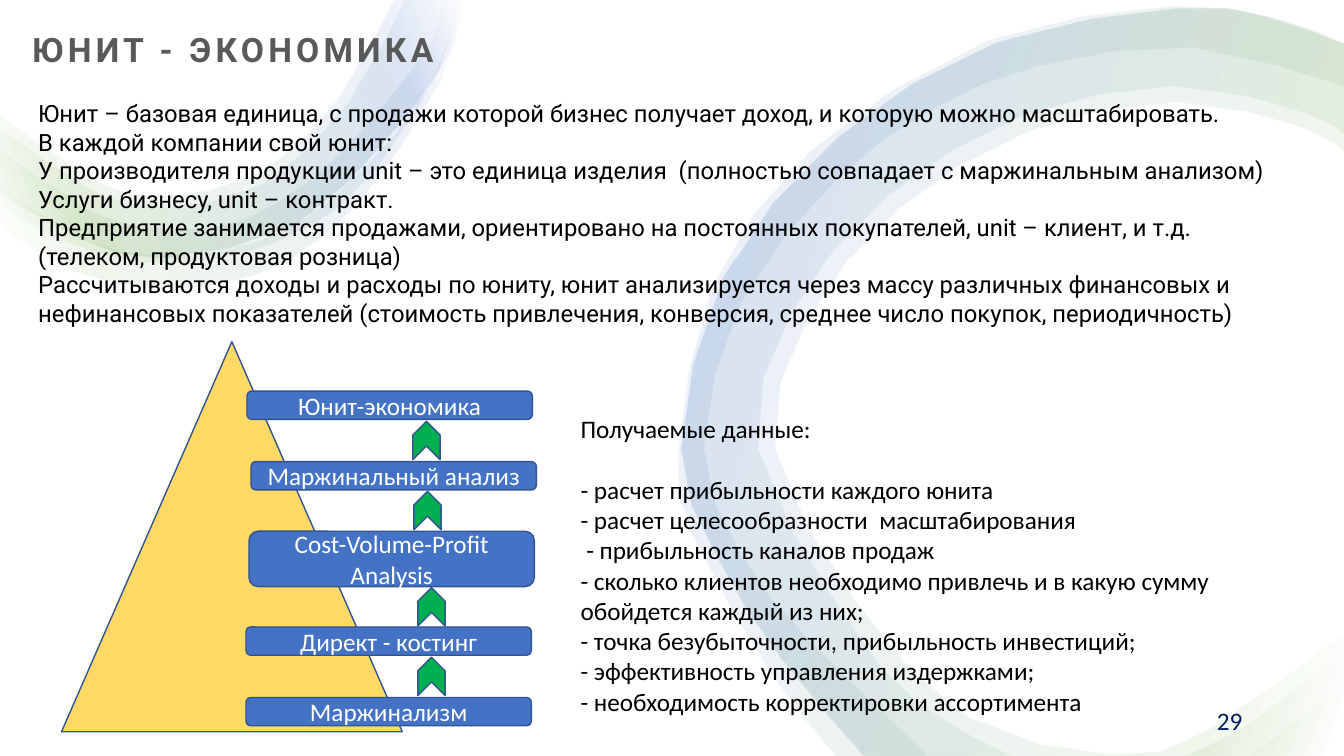
"""Build the unit economics slide with its ladder of methods and swirl backdrop."""
from lxml.etree import SubElement
from pptx import Presentation
from pptx.dml.color import RGBColor
from pptx.enum.shapes import MSO_SHAPE
from pptx.enum.text import MSO_ANCHOR, PP_ALIGN
from pptx.oxml.ns import qn
from pptx.util import Inches, Pt

WIDE, HIGH = 13.33, 7.5
HUES = {"title": "595959", "text": "000000", "box": "4472C4", "edge": "325491",
        "peak": "FFD966", "arrow": "00B050", "light": "FFFFFF", "page": "002060",
        "leaf": "70AD47"}
TITLE = "ЮНИТ - ЭКОНОМИКА"
INTRO = [
    "Юнит – базовая единица, с продажи которой бизнес получает доход, и которую можно масштабировать.",
    "В каждой компании свой юнит:",
    "У производителя продукции unit – это единица изделия  (полностью совпадает с маржинальным анализом)",
    "Услуги бизнесу, unit – контракт.",
    "Предприятие занимается продажами, ориентировано на постоянных покупателей, unit – клиент, и т.д.",
    "(телеком, продуктовая розница)",
    "Рассчитываются доходы и расходы по юниту, юнит анализируется через массу различных финансовых и "
    "нефинансовых показателей (стоимость привлечения, конверсия, среднее число покупок, периодичность)",
]
DATA = [
    "Получаемые данные:",
    "- расчет прибыльности каждого юнита",
    "- расчет целесообразности  масштабирования",
    " - прибыльность каналов продаж",
    "- сколько клиентов необходимо привлечь и в какую сумму обойдется каждый из них;",
    "- точка безубыточности, прибыльность инвестиций;",
    "- эффективность управления издержками;",
    "- необходимость корректировки ассортимента",
]
STEPS = [("Маржинализм", 2.44, 6.92, 0.28), ("Директ - костинг", 2.44, 6.22, 0.28),
         ("Cost-Volume-Profit Analysis", 2.47, 5.27, 0.55),
         ("Маржинальный анализ", 2.49, 4.58, 0.28), ("Юнит-экономика", 2.45, 3.88, 0.28)]
MIDS = [4.28, 4.28, 4.24, 4.23]
STEP_W, ARROW_W, ARROW_H = 2.83, 0.38, 0.27

TAIL = [(0, 1.91), (0.78, 2.36), (1.61, 2.56), (2.94, 2.23), (3.88, 1.33), (4.37, 0.66), (4.56, 0)]
RING = [(13.33, 0.45), (12.53, 0.17), (11.67, 0.09), (9.87, 0.43), (8.3, 1.37), (7.18, 2.75),
        (6.76, 4.45), (7.1, 5.5), (7.74, 6.52), (8.57, 7.5)]
LEFT = [
    [[[(4.57, 0), (4.24, 0.89), (3.61, 1.66), (2.98, 2.19), (2.22, 2.48),
       (1.52, 2.52), (0.87, 2.38), (0, 1.85)],
      [(0, 2.24), (0.73, 2.68), (1.55, 2.85), (2.28, 2.78), (2.87, 2.56), (3.57, 1.99),
       (4.37, 0.8), (4.6, 0)]]],
    [[[(4.38, 0), (4.27, 0.43), (3.63, 1.25), (3.08, 1.78), (2.44, 2.17),
       (1.74, 2.28), (0.95, 2.12), (0, 1.48)],
      [(0, 2.01), (0.52, 2.34), (1.38, 2.6), (2.27, 2.54), (3.1, 2.23), (3.74, 1.66),
       (4.47, 0.5), (4.56, 0)]]],
    [[[(4.02, 0), (3.44, 1.04), (2.62, 1.82), (1.61, 2.06), (0.92, 1.89), (0, 1.27)], TAIL]],
    [[[(3.91, 0), (3.35, 0.99), (2.6, 1.71), (1.61, 1.95), (0.97, 1.8), (0, 1.15)], TAIL]],
]
RIGHT = [
    [[RING, [(13.25, 7.5), (13.33, 7.43)],
      [(13.33, 6.26), (11.95, 7.25), (11.03, 7.48), (9.6, 7.11), (8.51, 6),
       (7.69, 4.45), (8.01, 3.18), (8.91, 2.07), (10.21, 1.3), (11.67, 1.02),
       (12.91, 1.27), (13.33, 1.52)]]],
    [[[(13.33, 0.44), (12.68, 0.2), (11.64, 0.07), (9.8, 0.41), (8.05, 1.5), (7.08, 2.84),
       (6.74, 4.45), (6.87, 5.29), (7.68, 6.72), (8.3, 7.5)],
      [(9.21, 7.5), (8.03, 6.35), (7.35, 5.49), (6.99, 4.45), (7.37, 2.98), (8.31, 1.78),
       (9.25, 1.09), (10.31, 0.66), (11.83, 0.48), (13.33, 0.87)]],
     [[(13.33, 6.78), (12.38, 7.5)], [(13.33, 7.5)]]],
    [[RING, [(10.04, 7.5), (9.1, 6.97), (8.36, 6.09), (7.52, 4.45), (7.85, 3.11),
             (8.79, 1.95), (10.14, 1.15), (11.65, 0.86), (12.95, 1.13), (13.33, 1.35)]],
     [[(13.33, 6.44), (12.38, 7.17), (11.73, 7.5)], [(13.23, 7.5), (13.33, 7.42)]]],
]


def color(key):
    return RGBColor.from_string(HUES[key])


def curve(knots):
    if len(knots) < 3:
        return knots
    full = [knots[0], *knots, knots[-1]]
    dots = [knots[0]]
    for a, b, c, d in zip(full, full[1:], full[2:], full[3:]):
        half = [(9 * (q + r) - p - s) / 16 for p, q, r, s in zip(a, b, c, d)]
        dots += [tuple(min(max(v, 0), top) for v, top in zip(half, (WIDE, HIGH))), c]
    return dots


def swirl(slide, loops, angle):
    rings = [[(Inches(x), Inches(y)) for edge in loop for x, y in curve(edge)] for loop in loops]
    pen = slide.shapes.build_freeform(*rings[0][0])
    for n, ring in enumerate(rings):
        if n:
            pen.move_to(*ring[0])
        pen.add_line_segments(ring[1:], close=True)
    band = pen.convert_to_shape()
    band.shadow.inherit = False
    band.line.fill.background()
    band.fill.gradient()
    grad = band.fill._xPr.find(qn("a:gradFill"))
    for child in list(grad):
        grad.remove(child)
    stops = SubElement(grad, qn("a:gsLst"))
    for share, key in ((2, "light"), (16, "leaf"), (85, "box"), (100, "light")):
        stop = SubElement(stops, qn("a:gs"), pos=str(share * 1000))
        tint = SubElement(stop, qn("a:srgbClr"), val=HUES[key])
        SubElement(tint, qn("a:alpha"), val="10000")
    SubElement(grad, qn("a:lin"), ang=str(angle * 60000), scaled="0")


def write(shape, lines, size, font, key, align=PP_ALIGN.LEFT, anchor=MSO_ANCHOR.TOP):
    frame = shape.text_frame
    frame.word_wrap = True
    frame.vertical_anchor = anchor
    frame.text = "\n".join(lines)
    for para in frame.paragraphs:
        para.alignment = align
        for run in para.runs:
            run.font.size, run.font.name = Pt(size), font
            run.font.color.rgb = color(key)
    return frame.paragraphs[0]


def label(slide, area, *style):
    return write(slide.shapes.add_textbox(*map(Inches, area)), *style)


def block(slide, kind, area, key):
    shape = slide.shapes.add_shape(kind, *map(Inches, area))
    shape.shadow.inherit = False
    shape.fill.solid()
    shape.fill.fore_color.rgb = color(key)
    shape.line.color.rgb = color("edge")
    shape.line.width = Pt(1)
    return shape


def main():
    deck = Presentation()
    deck.slide_width, deck.slide_height = Inches(WIDE), Inches(HIGH)
    slide = deck.slides.add_slide(deck.slide_layouts[6])
    for bands, angle in ((LEFT, 340), (RIGHT, 200)):
        for loops in bands:
            swirl(slide, loops, angle)

    head = label(slide, (0.22, 0.24, 12.9, 0.5), [TITLE], 24, "Roboto", "title").runs[0]
    head.font.bold = True
    head.font._element.set("spc", "300")
    label(slide, (0.28, 0.93, 12.55, 2.39), INTRO, 17, "Roboto", "text")
    lead = label(slide, (5.66, 4.05, 6.69, 3.13), DATA, 18, "Calibri", "text")
    lead.space_after = Pt(22)

    block(slide, MSO_SHAPE.ISOSCELES_TRIANGLE, (0.61, 3.39, 3.38, 3.87), "peak")
    for name, x, y, tall in STEPS:
        box = block(slide, MSO_SHAPE.ROUNDED_RECTANGLE, (x, y, STEP_W, tall), "box")
        write(box, [name], 18, "Calibri", "light", PP_ALIGN.CENTER, MSO_ANCHOR.MIDDLE)
    for mid, low, high in zip(MIDS, STEPS, STEPS[1:]):
        level = (low[2] + high[2] + high[3]) / 2
        area = (mid - ARROW_W / 2, level - ARROW_H / 2, ARROW_W, ARROW_H)
        block(slide, MSO_SHAPE.CHEVRON, area, "arrow").rotation = 270

    label(slide, (9.42, 6.95, 3, 0.4), ["29"], 18, "Calibri", "page",
          PP_ALIGN.RIGHT, MSO_ANCHOR.MIDDLE)
    deck.save("out.pptx")


if __name__ == "__main__":
    main()
